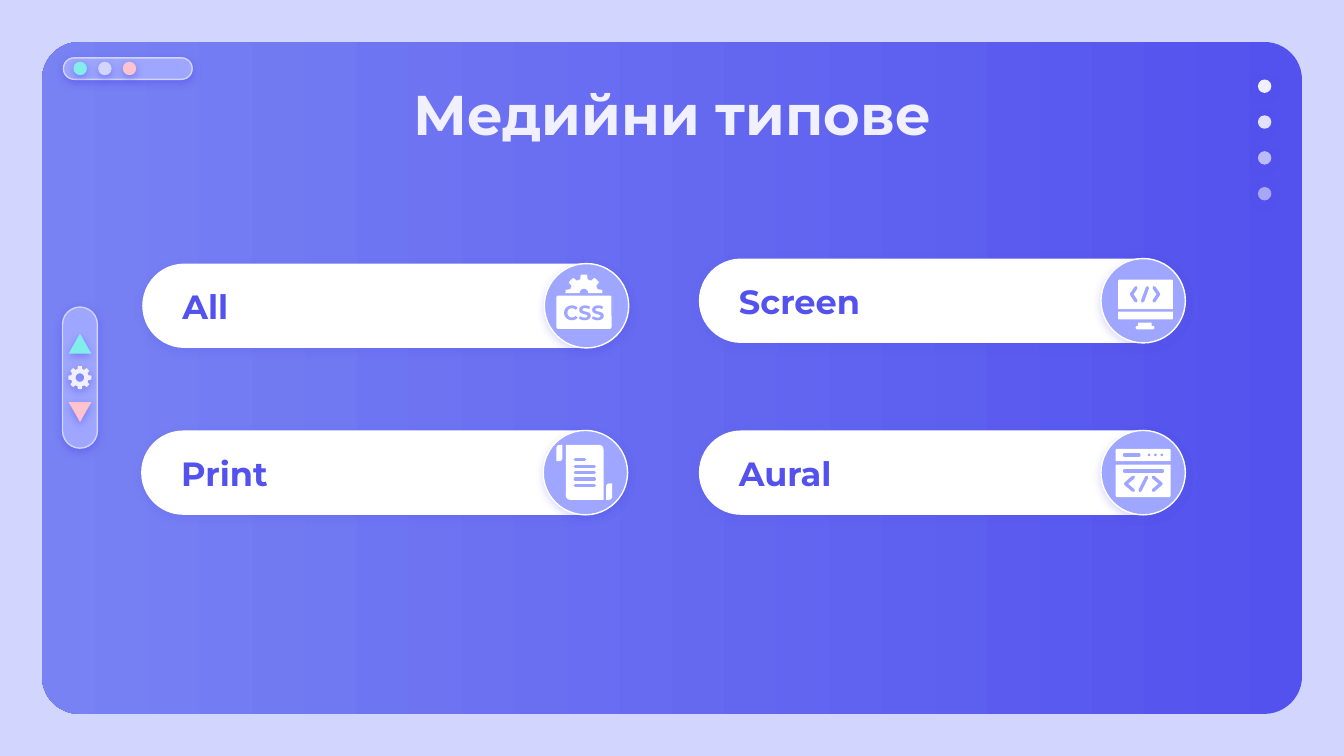
"""Build the slide of media types with four labelled pills."""
import math
from lxml import etree
from pptx import Presentation
from pptx.dml import color
from pptx.enum import shapes, text
from pptx.oxml import ns
from pptx.util import Pt

COLOURS = {
    "indigo": "5352EE", "blue": "7882F3", "lilac": "9EA6FF", "pale": "D2D6FF",
    "mint": "81EEEB", "pink": "FFC3D0", "light": "F1F0FF", "white": "FFFFFF",
}
RGB = {name: color.RGBColor.from_string(value) for name, value in COLOURS.items()}
KIND = shapes.MSO_SHAPE


def style_shape(shape, fill, line=None, shadow=0, alpha=100):
    """Set fill, outline and soft shadow."""
    shape.shadow.inherit = False
    shape.fill.solid()
    shape.fill.fore_color.rgb = RGB[fill]
    if alpha < 100:
        value = shape._element.spPr.find(".//" + ns.qn("a:srgbClr"))
        etree.SubElement(value, ns.qn("a:alpha"), val=str(alpha * 1000))
    if line:
        shape.line.color.rgb = RGB[line]
        shape.line.width = Pt(0.75)
    else:
        shape.line.fill.background()
    if shadow:
        effects = shape._element.spPr.find(ns.qn("a:effectLst"))
        outer = etree.SubElement(
            effects, ns.qn("a:outerShdw"), blurRad=str(Pt(4.5)), dist=str(Pt(1.5)),
            dir="5400000", algn="bl", rotWithShape="0")
        value = etree.SubElement(outer, ns.qn("a:srgbClr"), val=COLOURS["indigo"])
        etree.SubElement(value, ns.qn("a:alpha"), val=str(shadow * 1000))


def add_shape(kind, box, fill, adjust=(), **styles):
    """Add a styled preset shape at a box in points."""
    shape = slide.shapes.add_shape(kind, *map(Pt, box))
    for index, value in enumerate(adjust):
        shape.adjustments[index] = value
    style_shape(shape, fill, **styles)
    return shape


presentation = Presentation()
presentation.slide_width, presentation.slide_height = Pt(720), Pt(405)
slide = presentation.slides.add_slide(presentation.slide_layouts[6])
slide.background.fill.solid()
slide.background.fill.fore_color.rgb = RGB["pale"]

panel = add_shape(KIND.ROUNDED_RECTANGLE, (22.5, 22.5, 675, 360), "indigo", [0.056])
panel.fill.gradient()
panel.fill.gradient_angle = 180
for stop, name in zip(panel.fill.gradient_stops, ("indigo", "blue")):
    stop.color.rgb = RGB[name]

add_shape(KIND.ROUNDED_RECTANGLE, (34, 31, 69, 11.5), "lilac", [0.5], line="pale", shadow=50)
for index, name in enumerate(("mint", "pale", "pink")):
    add_shape(KIND.OVAL, (39.4 + 13.2 * index, 33.1, 7.2, 7.2), name, shadow=50)
for index, alpha in enumerate((100, 90, 67, 54)):
    add_shape(KIND.OVAL, (673.9, 42.6 + 19.2 * index, 7.2, 7.2), "light", shadow=50, alpha=alpha)

add_shape(KIND.ROUNDED_RECTANGLE, (33.5, 164.5, 18.7, 75.6), "lilac", [0.5], line="pale", shadow=50)
for top, name, rotation in ((178.8, "mint", 0), (215.5, "pink", 180)):
    triangle = add_shape(KIND.ISOSCELES_TRIANGLE, (36.8, top, 12.1, 10.6), name, shadow=50)
    triangle.rotation = rotation

title = slide.shapes.add_textbox(Pt(56.7), Pt(35.4), Pt(607), Pt(45.4))
texts = [(title, "Медийни типове", 30, "light", "CENTER", "TOP", 7.2)]

cards = [("All", 76.2, 141.2), ("Screen", 374.4, 138.5), ("Print", 75.6, 230.6), ("Aural", 374.4, 230.6)]
for label, left, top in cards:
    add_shape(KIND.ROUNDED_RECTANGLE, (left, top, 260.6, 45.2), "white", [0.5], shadow=18)
    caption = add_shape(KIND.RECTANGLE, (left + 14.4, top + 10, 217.4, 26), "white")
    add_shape(KIND.OVAL, (left + 215.4, top, 45.2, 45.2), "lilac", line="white", shadow=22)
    texts.append((caption, label, 18, "indigo", "LEFT", "MIDDLE", 7.2))

css_box = add_shape(KIND.ROUNDED_RECTANGLE, (298.1, 158.4, 29.5, 17.8), "white", [0.05])
texts.append((css_box, "CSS", 11, "lilac", "CENTER", "MIDDLE", 0))

icon_parts = [
    (KIND.ROUND_2_SAME_RECTANGLE, (599, 149.8, 29.4, 15.8), [0.05, 0]),
    (KIND.ROUND_2_SAME_RECTANGLE, (599, 167, 29.4, 4.2), [0, 0.15]),
    (KIND.RECTANGLE, (609.8, 172.8, 7.2, 2.4), []),
    (KIND.ROUNDED_RECTANGLE, (608.4, 174.6, 10.1, 1.8), [0.5]),
    (KIND.ROUND_2_DIAG_RECTANGLE, (303.1, 238.3, 20.2, 29.5), [0, 0.12]),
    (KIND.ROUND_2_DIAG_RECTANGLE, (298.1, 238.3, 3.2, 8.8), [0.5, 0]),
    (KIND.ROUND_2_DIAG_RECTANGLE, (324.7, 259, 3.2, 8.8), [0.5, 0]),
    (KIND.ROUND_2_SAME_RECTANGLE, (597.7, 240.5, 29.4, 6.5), [0.1, 0]),
    (KIND.ROUND_2_SAME_RECTANGLE, (597.7, 249, 29.4, 17.4), [0, 0.05]),
]
for kind, box, adjust in icon_parts:
    add_shape(kind, box, "white", adjust)
for index in range(3):
    add_shape(KIND.OVAL, (614.9 + 3.4 * index, 243, 1.4, 1.4), "lilac")

gears = [(42.8, 202.3, 6.2, 4.8, 2.3, 0, "light", 52), (312.8, 157, 9.9, 7.6, 2.3, 180, "white", 0)]
for x, y, outer, inner, hole, start, name, shadow in gears:
    profile = ((-15, inner), (-10, outer), (0, outer), (10, outer), (15, inner))
    rim = [(45 * tooth + offset, radius) for tooth in range(9) for offset, radius in profile]
    rim = [(angle, radius) for angle, radius in rim if start <= angle <= 360]
    rim += [(angle, hole) for angle in range(360, start - 1, -15)]
    points = [(Pt(x + radius * math.cos(math.radians(angle))),
               Pt(y + radius * math.sin(math.radians(angle)))) for angle, radius in rim]
    builder = slide.shapes.build_freeform(*points[0], scale=1)
    builder.add_line_segments(points[1:])
    style_shape(builder.convert_to_shape(), name, shadow=shadow)

strokes = [[(308.2, 246.2), (313.2, 246.2)], [(602.4, 243.7), (610.2, 243.7)],
           [(602.4, 252.3), (622.8, 252.3)]]
strokes += [[(308.2, 249.8 + 3.4 * row), (318.4, 249.8 + 3.4 * row)] for row in range(4)]
for x, y, gap, depth, height, lean in ((613.4, 157.7, 4.8, 2.4, 3.6, 1.3), (612.5, 259.2, 5.3, 4.2, 3.6, 1.8)):
    for side in (-1, 1):
        near, far = x + side * gap, x + side * (gap + depth)
        strokes.append([(near, y - height), (far, y), (near, y + height)])
    strokes.append([(x + lean, y - height), (x - lean, y + height)])
for stroke in strokes:
    points = [(Pt(x), Pt(y)) for x, y in stroke]
    if len(points) == 2:
        mark = slide.shapes.add_connector(shapes.MSO_CONNECTOR.STRAIGHT, *points[0], *points[1])
    else:
        builder = slide.shapes.build_freeform(*points[0], scale=1)
        mark = builder.add_line_segments(points[1:], close=False).convert_to_shape()
        mark.fill.background()
    mark.line.color.rgb = RGB["lilac"]
    mark.line.width = Pt(1.75)
    mark.line._get_or_add_ln().set("cap", "rnd")
    etree.SubElement(mark._element.spPr, ns.qn("a:effectLst"))

for shape, words, size, name, align, anchor, inset in texts:
    frame = shape.text_frame
    frame_format = {"word_wrap": inset > 0, "vertical_anchor": text.MSO_ANCHOR[anchor]}
    frame_format |= {"margin_" + side: Pt(inset) for side in ("left", "top", "right", "bottom")}
    for key, value in frame_format.items():
        setattr(frame, key, value)
    paragraph = frame.paragraphs[0]
    paragraph.alignment = text.PP_ALIGN[align]
    run = paragraph.add_run()
    run.text = words
    for key, value in {"name": "Montserrat", "size": Pt(size), "bold": True}.items():
        setattr(run.font, key, value)
    run.font.color.rgb = RGB[name]

presentation.save("out.pptx")
